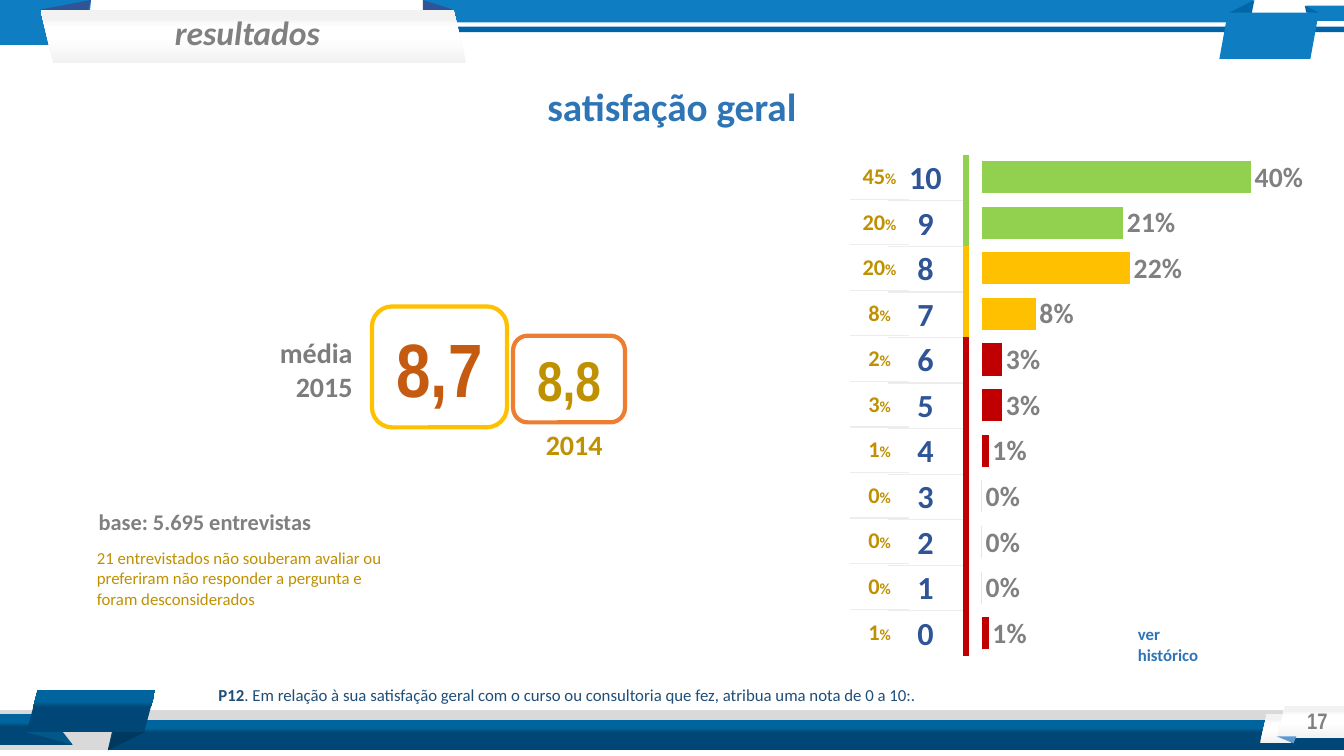
import dataclasses

import pptx
import pptx.chart.data
import pptx.dml.color
import pptx.enum.chart
import pptx.enum.shapes
import pptx.enum.text
import pptx.oxml
import pptx.oxml.ns
import pptx.util

Pt = pptx.util.Pt
ALIGN = pptx.enum.text.PP_ALIGN
ANCHOR = pptx.enum.text.MSO_ANCHOR


@dataclasses.dataclass(frozen=True)
class Theme:
    font: str = "Calibri"
    narrow: str = "Arial Narrow"
    blue: str = "0E7DC2"
    stripe: str = "0064A8"
    fold: str = "2F5597"
    logo_fold: str = "0068A9"
    page_fold: str = "5B9BD5"
    deep_fold: str = "003960"
    mid_fold: str = "015889"
    band: str = "D9D9D9"
    rule: str = "EDEDED"
    white: str = "FFFFFF"
    grey: str = "808080"
    label_grey: str = "7C7C7C"
    heading: str = "2E75B6"
    question: str = "1F4E79"
    previous: str = "BF9000"
    score: str = "C55A11"
    orange: str = "ED7D31"
    high: str = "92D050"
    medium: str = "FFC000"
    low: str = "C00000"
    paper: tuple = ((0, "F2F2F2"), (50, "FFFFFF"), (68, "FFFFFF"), (83, "F2F2F2"))
    navy: tuple = ((0, "004676"), (59, "004676"), (65, "005585"), (72, "00659E"))
    huge: int = 54
    big: int = 40
    title: int = 28
    section: int = 24
    grade: int = 23
    label: int = 20
    body: int = 16
    small: int = 12
    percent: int = 11


T = Theme()
# Grades from best to worst, with the share of answers in each year
GRADES = list(range(10, -1, -1))
SHARE_2015 = [0.4, 0.21, 0.22, 0.08, 0.03, 0.03, 0.01, 0, 0, 0, 0.01]
SHARE_2014 = [45, 20, 20, 8, 2, 3, 1, 0, 0, 0, 1]
ROW_HEIGHT = 32.55


def rgb(value):
    return pptx.dml.color.RGBColor.from_string(value)


def zone_colour(grade):
    return T.high if grade >= 9 else T.medium if grade >= 7 else T.low


def xml(tag, body="", attributes=""):
    return pptx.oxml.parse_xml(
        f'<{tag} {pptx.oxml.ns.nsdecls("a", "c")} {attributes}>{body}</{tag}>')


def add_run(paragraph, words, size, colour, bold=True, italic=False, font=T.font):
    run = paragraph.add_run()
    run.text = words
    run.font.name, run.font.size = font, Pt(size)
    run.font.bold, run.font.italic = bold, italic
    run.font.color.rgb = rgb(colour)


def set_frame(frame, align=ALIGN.LEFT, anchor=ANCHOR.TOP, inset=None):
    frame.word_wrap = True
    frame.auto_size = pptx.enum.text.MSO_AUTO_SIZE.NONE
    frame.vertical_anchor = anchor
    if inset is not None:
        frame.margin_left = frame.margin_right = Pt(inset)
        frame.margin_top = frame.margin_bottom = Pt(inset)
    frame.paragraphs[0].alignment = align
    return frame.paragraphs[0]


def add_text(slide, box, align=ALIGN.LEFT, anchor=ANCHOR.TOP, inset=None):
    frame = slide.shapes.add_textbox(*map(Pt, box)).text_frame
    return set_frame(frame, align, anchor, inset)


def add_panels(slide, box, panels):
    """Draw filled outlines whose corners are offsets from the box."""
    for fill, *corners in panels:
        corners = [(box[0] + x, box[1] + y) for x, y in corners]
        builder = slide.shapes.build_freeform(*corners[0], scale=Pt(1))
        builder.add_line_segments(corners[1:], close=True)
        panel = builder.convert_to_shape()
        panel.shadow.inherit = False
        panel.line.fill.background()
        if isinstance(fill, str):
            panel.fill.solid()
            panel.fill.fore_color.rgb = rgb(fill)
            continue
        panel.fill.gradient()
        panel.fill.gradient_angle = 90
        stops = panel._element.spPr.find(".//" + pptx.oxml.ns.qn("a:gsLst"))
        for stop in list(stops):
            stops.remove(stop)
        for position, colour in fill:
            stops.append(xml("a:gs", f'<a:srgbClr val="{colour}"/>', f'pos="{position * 1000}"'))


def add_header(slide, box):
    add_panels(slide, box, [
        (T.blue, (317.5, 16.5), (302, 0), (895, 0), (893, 16.5)),
        (T.stripe, (312.5, 19.4), (960, 19.4), (960, 23), (313.4, 23)),
        (T.blue, (0, 0), (64.8, 0), (62, 31.7), (0, 31.7)),
        (T.paper, (28.8, 7.2), (324, 7.2), (333.4, 44.6), (38.2, 44.6)),
        (T.fold, (28, 7.2), (64.8, 0), (63.4, 6.8)),
        (T.fold, (324, 7.2), (301.7, 0), (302.4, 7.2)),
        # Plain plaque at the right
        (T.logo_fold, (894.2, 10.1), (877.7, 9.4), (895.7, 0)),
        (T.blue, (933, 3.6), (960, 3.6), (960, 15.1), (935, 15.1)),
        (T.logo_fold, (933, 8.6), (941.8, 8.6), (932.4, 3.6)),
        (T.blue, (876.8, 8.6), (941.8, 8.6), (936.2, 42.5), (871.2, 42.5)),
    ])
    section = add_text(slide, (box[0] + 43.2, box[1] + 8, 267, 30), ALIGN.CENTER)
    section.line_spacing = 0.9
    add_run(section, "resultados", T.section, T.grey, italic=True)


def add_footer(slide, box):
    add_panels(slide, box, [
        (T.band, (0, 14), (960, 14), (960, 42.7), (0, 42.7)),
        (T.navy, (82.4, 21), (960, 21), (960, 42.7), (77, 42.7)),
        (T.navy, (0, 16.8), (23, 16.8), (51.8, 39), (0, 39)),
        (T.deep_fold, (77, 42.7), (103, 30.4), (80.6, 30.4)),
        (T.mid_fold, (51.8, 39), (19.4, 30.4), (44.6, 30.4)),
        (T.navy, (27, 0.2), (110.9, 0.2), (103.3, 30.4), (19.4, 30.4)),
        (T.paper, (905.2, 17.5), (927.4, 17.5), (922.1, 38.4), (900, 38.4)),
        (T.paper, (918, 11), (960, 11), (960, 34), (912.2, 34)),
        (T.page_fold, (912.2, 32.6), (924.5, 38.4), (925.9, 33.3)),
    ])
    page = add_text(slide, (box[0] + 739.4, box[1] + 8.8, 216, 28.8), ALIGN.RIGHT)
    add_run(page, "17", T.body, T.grey, font=T.narrow)
    question = add_text(slide, (box[0] + 149, box[1] - 7.7, 748.8, 19.4))
    add_run(question, "P12", T.small, T.question)
    add_run(question, ". Em relação à sua satisfação geral com o curso ou consultoria "
            "que fez, atribua uma nota de 0 a 10:.", T.small, T.question, bold=False)


def add_title(slide, box):
    title = slide.shapes.title
    title.left, title.top, title.width, title.height = map(Pt, box)
    add_run(set_frame(title.text_frame, ALIGN.CENTER), "satisfação geral", T.title, T.heading)


def add_averages(slide, box):
    left, top = box[:2]
    for card_box, line, words, size, colour in (
            ((113.8, 0, 96.5, 86.4), T.medium, "8,7", T.huge, T.score),
            ((214.6, 20.9, 79.9, 61.9), T.orange, "8,8", T.big, T.previous)):
        x, y, width, height = card_box
        card = slide.shapes.add_shape(pptx.enum.shapes.MSO_SHAPE.ROUNDED_RECTANGLE,
                                      Pt(left + x), Pt(top + y), Pt(width), Pt(height))
        card.shadow.inherit = False
        card.fill.solid()
        card.fill.fore_color.rgb = rgb(T.white)
        card.line.color.rgb, card.line.width = rgb(line), Pt(3)
        paragraph = set_frame(card.text_frame, ALIGN.CENTER, ANCHOR.MIDDLE, 0)
        add_run(paragraph, words, size, colour, font=T.narrow)
    average = add_text(slide, (left, top + 20.9, 100, 48.2), ALIGN.RIGHT, inset=0)
    add_run(average, "média", T.label, T.label_grey)
    year = average._parent.add_paragraph()
    year.alignment = ALIGN.RIGHT
    add_run(year, "2015", T.label, T.label_grey)
    previous = add_text(slide, (left + 178.6, top + 86.4, 100, 24.5), ALIGN.RIGHT, inset=0)
    add_run(previous, "2014", T.label, T.previous)


def add_sample(slide, box):
    left, top = box[:2]
    add_run(add_text(slide, (left, top, 183, 26.6)), "base: 5.695 entrevistas", T.body, T.grey)
    note = add_text(slide, (left + 5.8, top + 23.8, 209.5, 59.8), anchor=ANCHOR.MIDDLE, inset=0)
    add_run(note, "21 entrevistados não souberam avaliar ou preferiram não responder "
            "a pergunta e foram desconsiderados", T.small, T.previous, bold=False)


def add_grid(slide, left, top, widths):
    """Add a plain table with one row per grade."""
    grid = slide.shapes.add_table(len(GRADES), len(widths), Pt(left), Pt(top), Pt(sum(widths)),
                                  Pt(ROW_HEIGHT * len(GRADES))).table
    grid.first_row = grid.horz_banding = False
    for column, width in zip(grid.columns, widths):
        column.width = Pt(width)
    for row in grid.rows:
        row.height = Pt(ROW_HEIGHT)
    return grid


def set_cell(cell, fill=None, ruled=()):
    for side in "LRTB":
        line = f'<a:solidFill><a:srgbClr val="{T.rule}"/></a:solidFill>'
        cell._tc.get_or_add_tcPr().append(xml(
            f"a:ln{side}", line if side in ruled else "<a:noFill/>", 'w="12700"'))
    cell.margin_left = cell.margin_right = cell.margin_top = Pt(0.7)
    cell.margin_bottom = 0
    cell.vertical_anchor = ANCHOR.MIDDLE
    if fill:
        cell.fill.solid()
        cell.fill.fore_color.rgb = rgb(fill)
    else:
        cell.fill.background()
    paragraph = cell.text_frame.paragraphs[0]
    paragraph.alignment = ALIGN.CENTER
    return paragraph


def add_distribution(slide, box):
    left, top, width, height = box
    scale = add_grid(slide, left + 27.4, top + 1.2, (53.3, 4.3))
    previous = add_grid(slide, left, top, (42.5,))
    for row, grade in enumerate(GRADES):
        ruled = ("T" if row else "") + ("B" if grade else "")
        add_run(set_cell(scale.cell(row, 0), ruled=ruled), str(grade), T.grade, T.fold)
        set_cell(scale.cell(row, 1), zone_colour(grade))
        share = set_cell(previous.cell(row, 0), ruled=ruled)
        add_run(share, str(SHARE_2014[row]), T.body, T.previous)
        add_run(share, "%", T.percent, T.previous)

    # Bars for 2015, listed from the bottom up
    data = pptx.chart.data.CategoryChartData(number_format="0%")
    data.categories = [str(n + 1) for n in range(len(GRADES))]
    data.add_series("Series 1", SHARE_2015[::-1])
    chart = slide.shapes.add_chart(pptx.enum.chart.XL_CHART_TYPE.BAR_CLUSTERED, Pt(left + 79.9),
                                   Pt(top + 0.5), Pt(width - 79.9), Pt(height), data).chart
    chart.has_legend = chart.has_title = False
    chart.font.name, chart.font.size = T.font, Pt(10)
    chart.category_axis.visible = chart.value_axis.visible = False
    chart.value_axis.has_major_gridlines = False
    chart.value_axis.minimum_scale, chart.value_axis.maximum_scale = 0, 0.47
    plot = chart.plots[0]
    plot.gap_width, plot.vary_by_categories = 42, False
    for index, grade in enumerate(GRADES[::-1]):
        bar = plot.series[0].points[index].format.fill
        bar.solid()
        bar.fore_color.rgb = rgb(zone_colour(grade))
    plot.has_data_labels = True
    labels = plot.data_labels
    labels.show_value = True
    labels.number_format, labels.number_format_is_linked = "0%", False
    labels.position = pptx.enum.chart.XL_LABEL_POSITION.OUTSIDE_END
    labels.font.name, labels.font.size, labels.font.bold = T.font, Pt(T.label), True
    labels.font.color.rgb = rgb(T.grey)
    area = chart._chartSpace.chart.plotArea
    for layout in area.findall(pptx.oxml.ns.qn("c:layout")):
        area.remove(layout)
    places = (("layoutTarget", "inner"), ("xMode", "edge"), ("yMode", "edge"),
              ("x", 0.06), ("y", 0), ("w", 0.94), ("h", 1))
    manual = "".join(f'<c:{tag} val="{value}"/>' for tag, value in places)
    area.insert(0, xml("c:layout", f"<c:manualLayout>{manual}</c:manualLayout>"))

    history = add_text(slide, (left + 198.7, top + 332.6, 63.4, 29.5))
    add_run(history, "ver histórico", T.small, T.heading)


def main():
    deck = pptx.Presentation()
    deck.slide_width, deck.slide_height = Pt(960), Pt(540)
    slide = deck.slides.add_slide(deck.slide_layouts[5])
    add_header(slide, (0, 0, 960, 45))
    add_footer(slide, (0, 493, 960, 47))
    add_title(slide, (330.5, 55.4, 298.8, 65.5))
    add_sample(slide, (63.4, 359.3, 216, 84))
    add_distribution(slide, (607, 109.7, 324, 358.5))
    add_averages(slide, (151.9, 218.9, 295, 111))
    deck.save("out.pptx")


if __name__ == "__main__":
    main()
